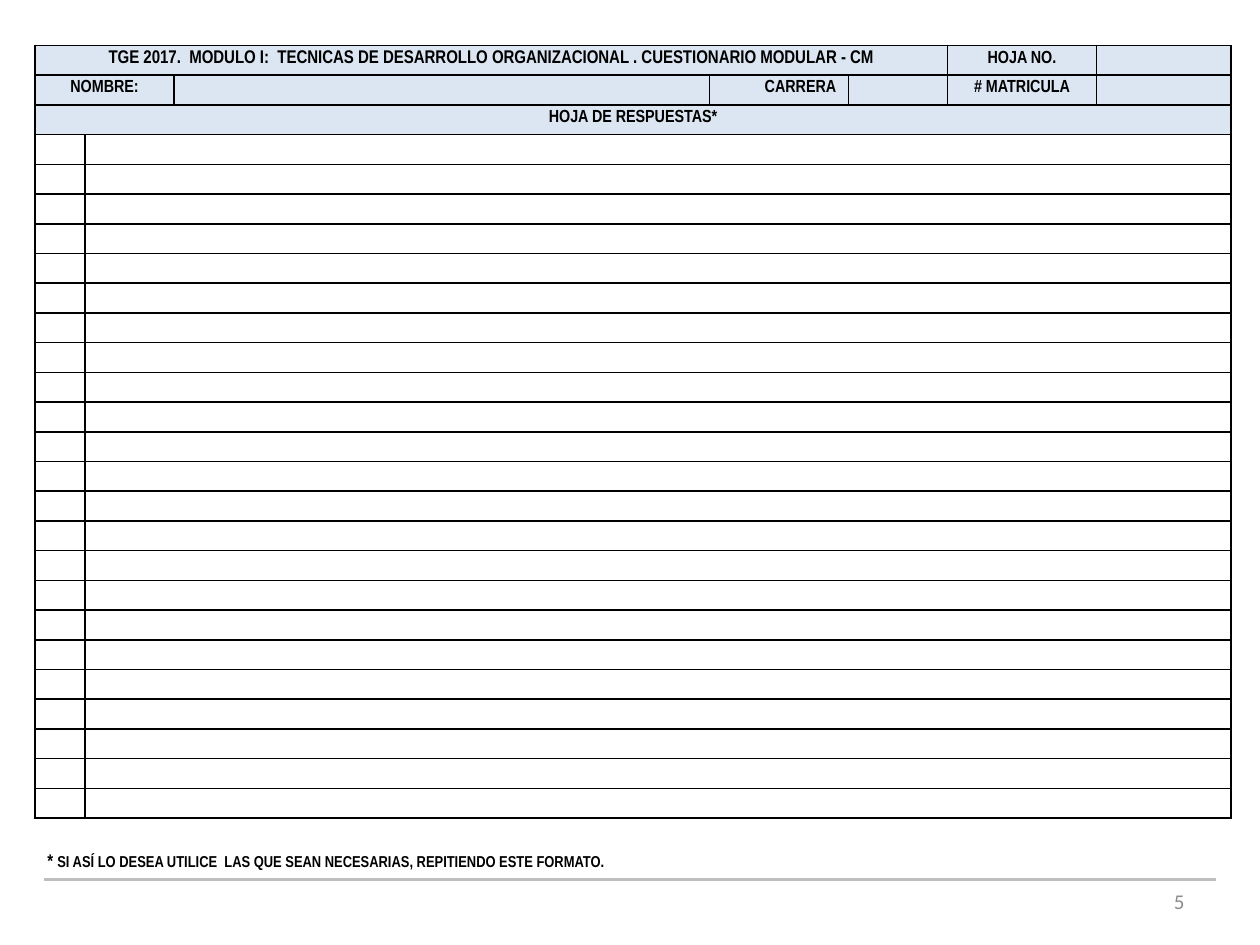
import dataclasses
import lxml.etree
import pptx
import pptx.dml.color
import pptx.enum.text
import pptx.oxml.ns
import pptx.util

Pt = pptx.util.Pt
qn = pptx.oxml.ns.qn
Align = pptx.enum.text.PP_ALIGN
Anchor = pptx.enum.text.MSO_ANCHOR


@dataclasses.dataclass(frozen=True)
class Theme:
    ink: str = "000000"
    header: str = "DCE6F2"
    rule: str = "BFBFBF"
    number: str = "8C8C8C"
    form_font: str = "Arial Narrow"
    number_font: str = "Calibri"
    title_size: float = 10.5
    label_size: float = 10
    note_size: float = 9
    number_size: float = 12
    empty_size: float = 8


@dataclasses.dataclass(frozen=True)
class Box:
    left: float
    top: float
    width: float
    height: float

    def lengths(self):
        return [Pt(value) for value in dataclasses.astuple(self)]


THEME = Theme()
COLUMNS = [28.5, 51, 306, 79.5, 56.5, 85, 77]
ROW_HEIGHT = 17
ANSWER_ROWS = 23
HEADER_ROWS = 3
SPANS = [(0, 0, 4), (1, 0, 1), (2, 0, 6)]
HEADINGS = [
    (0, 0, "TGE 2017.  MODULO I:  TECNICAS DE DESARROLLO ORGANIZACIONAL . CUESTIONARIO MODULAR - CM",
     THEME.title_size, Align.CENTER),
    (0, 5, "HOJA NO.", THEME.label_size, Align.CENTER),
    (1, 0, "NOMBRE:", THEME.label_size, Align.CENTER),
    (1, 3, "CARRERA", THEME.label_size, Align.RIGHT),
    (1, 5, "# MATRICULA", THEME.label_size, Align.CENTER),
    (2, 0, "HOJA DE RESPUESTAS*", THEME.label_size, Align.CENTER),
]


def apply(target, values):
    for name, value in values.items():
        setattr(target, name, value)


def rgb(colour):
    return pptx.dml.color.RGBColor.from_string(colour)


def add_span(para, text, size, font=THEME.form_font, colour=THEME.ink, bold=True):
    span = para.add_run()
    span.text = text
    apply(span.font, {"name": font, "size": Pt(size), "bold": bold})
    span.font.color.rgb = rgb(colour)


def add_borders(cell):
    properties = cell._tc.get_or_add_tcPr()
    for side in ("lnL", "lnR", "lnT", "lnB"):
        line = lxml.etree.SubElement(properties, qn(f"a:{side}"), w=str(Pt(1)))
        fill = lxml.etree.SubElement(line, qn("a:solidFill"))
        lxml.etree.SubElement(fill, qn("a:srgbClr"), val=THEME.ink)


def format_cell(cell, is_header):
    add_borders(cell)
    apply(cell, {"margin_left": Pt(7.2), "margin_right": Pt(7.2), "margin_top": 0,
                 "margin_bottom": Pt(2), "vertical_anchor": Anchor.MIDDLE})
    if is_header:
        cell.fill.solid()
        cell.fill.fore_color.rgb = rgb(THEME.header)
    else:
        cell.fill.background()
    para = cell.text_frame.paragraphs[0]
    lxml.etree.SubElement(para._p, qn("a:endParaRPr"), sz=str(int(THEME.empty_size * 100)))


def add_answer_sheet(page, box):
    row_count = HEADER_ROWS + ANSWER_ROWS
    table = page.shapes.add_table(row_count, len(COLUMNS), *box.lengths()).table
    apply(table, {"first_row": False, "horz_banding": False})
    for column, width in zip(table.columns, COLUMNS):
        column.width = Pt(width)
    for index, row in enumerate(table.rows):
        row.height = Pt(box.height / row_count)
        for cell in row.cells:
            format_cell(cell, index < HEADER_ROWS)
    answer_spans = [(row, 1, 6) for row in range(HEADER_ROWS, row_count)]
    for row, first, last in SPANS + answer_spans:
        table.cell(row, first).merge(table.cell(row, last))
    for row, column, text, size, align in HEADINGS:
        para = table.cell(row, column).text_frame.paragraphs[0]
        para.alignment = align
        add_span(para, text, size)


def add_text_box(page, box, anchor, align):
    frame = page.shapes.add_textbox(*box.lengths()).text_frame
    apply(frame, {"word_wrap": True, "vertical_anchor": anchor})
    para = frame.paragraphs[0]
    para.alignment = align
    return para


def add_footnote(page, box):
    para = add_text_box(page, box, Anchor.TOP, Align.LEFT)
    add_span(para, "* ", THEME.title_size)
    add_span(para, "SI ASÍ LO DESEA UTILICE  LAS QUE SEAN NECESARIAS, REPITIENDO ESTE FORMATO.",
             THEME.note_size)


def add_footer(page, box):
    rule = page.shapes.add_connector(
        pptx.enum.shapes.MSO_CONNECTOR.STRAIGHT, Pt(box.left), Pt(box.top),
        Pt(box.left + box.width), Pt(box.top))
    rule.line.color.rgb = rgb(THEME.rule)
    rule.line.width = Pt(2)
    lxml.etree.SubElement(rule._element.spPr, qn("a:effectLst"))
    number_width = 168
    number_box = Box(box.left + box.width - number_width - 11, box.top - 2,
                     number_width, box.height)
    para = add_text_box(page, number_box, Anchor.MIDDLE, Align.RIGHT)
    add_span(para, "5", THEME.number_size, THEME.number_font, THEME.number, False)


def main():
    deck = pptx.Presentation()
    apply(deck, {"slide_width": Pt(720), "slide_height": Pt(540)})
    page = deck.slides.add_slide(deck.slide_layouts[6])
    add_footer(page, Box(25, 502.5, 670, 29))
    add_answer_sheet(page, Box(20, 26, sum(COLUMNS), ROW_HEIGHT * (HEADER_ROWS + ANSWER_ROWS)))
    add_footnote(page, Box(20, 481.5, 669, 21))
    deck.save("out.pptx")


if __name__ == "__main__":
    main()
